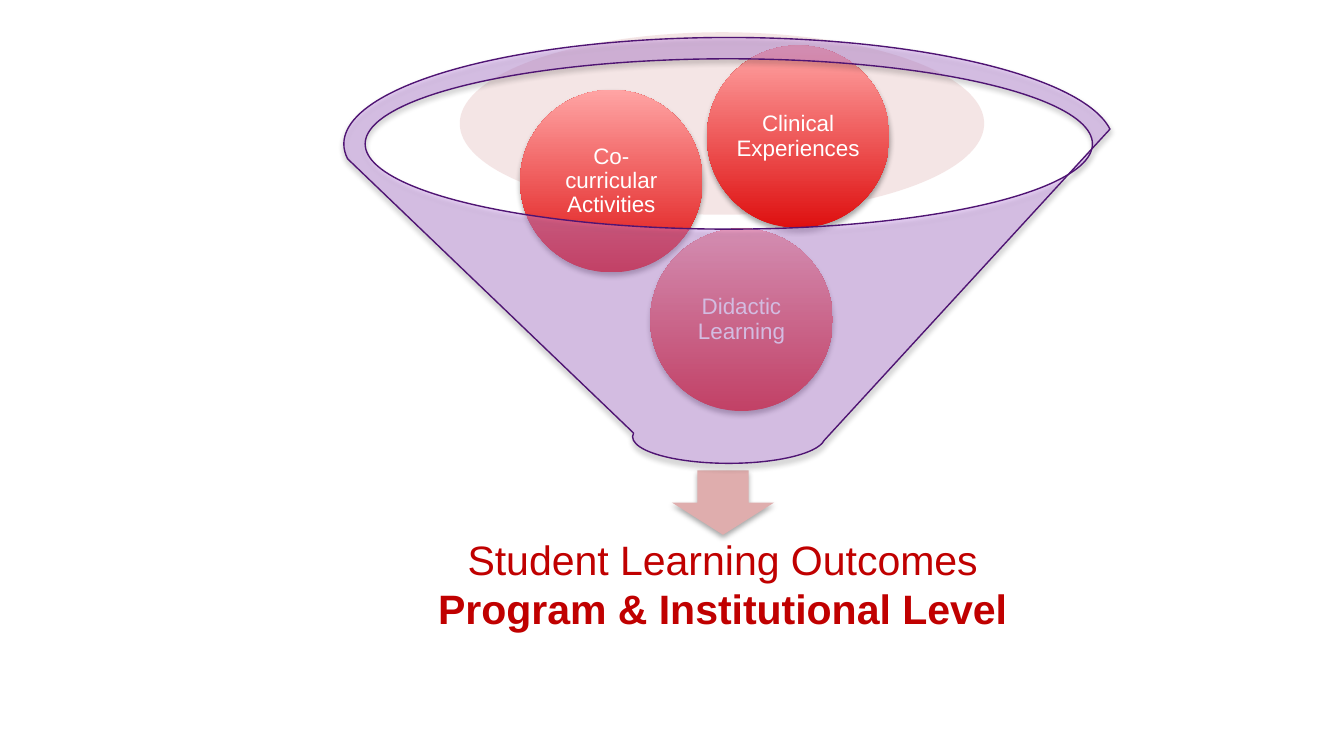
from lxml import etree
from pptx import Presentation
from pptx.dml.color import RGBColor
from pptx.enum.shapes import MSO_SHAPE
from pptx.enum.text import MSO_ANCHOR, MSO_AUTO_SIZE, PP_ALIGN
from pptx.oxml import parse_xml
from pptx.oxml.ns import nsdecls, qn
from pptx.util import Cm, Pt

OVAL, ARROW, FUNNEL = MSO_SHAPE.OVAL, MSO_SHAPE.DOWN_ARROW, MSO_SHAPE.FUNNEL
MIDDLE, CENTER = MSO_ANCHOR.MIDDLE, PP_ALIGN.CENTER
NO_FIT = MSO_AUTO_SIZE.NONE

BALL = 3.45
BALLS = [
    ("Didactic Learning", 6.4, 3.71),
    ("Co-curricular Activities", 3.94, 1.09),
    ("Clinical Experiences", 7.47, 0.25),
]
RESULT = ["Student Learning Outcomes", "Program & Institutional Level"]


def rgb(code):
    return RGBColor.from_string(code)


def add_shape(slide, kind, x, y, w, h, fill=None, alpha=None):
    shape = slide.shapes.add_shape(kind, Cm(x), Cm(y), Cm(w), Cm(h))
    shape.shadow.inherit = False
    shape.line.fill.background()
    if fill:
        shape.fill.solid()
        shape.fill.fore_color.rgb = rgb(fill)
    if alpha:
        color = shape._element.spPr.find(qn("a:solidFill"))[0]
        etree.SubElement(color, qn("a:alpha")).set("val", str(alpha * 1000))
    return shape


def add_shadow(shape):
    effects = shape._element.spPr.find(qn("a:effectLst"))
    effects.append(parse_xml(
        f'<a:outerShdw {nsdecls("a")} blurRad="{Pt(3.1)}" dist="{Pt(1.8)}"'
        ' dir="5400000" rotWithShape="0">'
        '<a:srgbClr val="000000"><a:alpha val="35000"/></a:srgbClr>'
        '</a:outerShdw>'))


def set_text(shape, lines, size, color, inset):
    frame = shape.text_frame
    frame.text = "\n".join(lines)
    frame.word_wrap = True
    frame.auto_size = NO_FIT
    frame.vertical_anchor = MIDDLE
    frame.margin_left = frame.margin_right = Cm(inset)
    frame.margin_top = frame.margin_bottom = Cm(inset)
    for para in frame.paragraphs:
        para.alignment = CENTER
        for run in para.runs:
            run.font.name = "Arial"
            run.font.size = Pt(size)
            run.font.color.rgb = rgb(color)
    return frame.paragraphs


def add_ball(slide, text, x, y):
    ball = add_shape(slide, OVAL, x, y, BALL, BALL)
    ball.fill.gradient()
    ball.fill.gradient_angle = 90
    for stop, place, color in zip(ball.fill.gradient_stops, (0, 1),
                                  ("DE1010", "FFA4A4")):
        stop.position = place
        stop.color.rgb = rgb(color)
    add_shadow(ball)
    set_text(ball, [text], 12, "FFFFFF", 0.05)[0].line_spacing = 0.9


def add_result(slide, x, y, w, h):
    title = slide.shapes.title
    title.left, title.top, title.width, title.height = map(Cm, (x, y, w, h))
    lines = set_text(title, RESULT, 22, "C00000", 0.43)
    lines[1].runs[0].font.bold = True


def add_funnel(slide, x, y, w):
    """Draw the mouth, arrow, result, balls and cone, from back to front."""
    add_shape(slide, OVAL, x + 2.8, y, 9.91, BALL, "E5BEBE", 40)
    add_shadow(add_shape(slide, ARROW, x + 6.81, y + 8.28, 1.93, 1.22, "DFADAD"))
    add_result(slide, x, y + 8.94, w, 2.95)
    for text, dx, dy in BALLS:
        add_ball(slide, text, x + dx, y + dy)
    cone = add_shape(slide, FUNNEL, x + 0.61, y + 0.1, 14.55, 8.05, "C88FEB", 40)
    cone.line.color.rgb = rgb("4F1473")
    cone.line.width = Pt(0.75)
    add_shadow(cone)


def main():
    deck = Presentation()
    deck.slide_width, deck.slide_height = Cm(25.4), Cm(14.29)
    slide = deck.slides.add_slide(deck.slide_layouts[5])
    add_funnel(slide, 5.89, 0.61, 15.54)
    deck.save("out.pptx")


if __name__ == "__main__":
    main()
